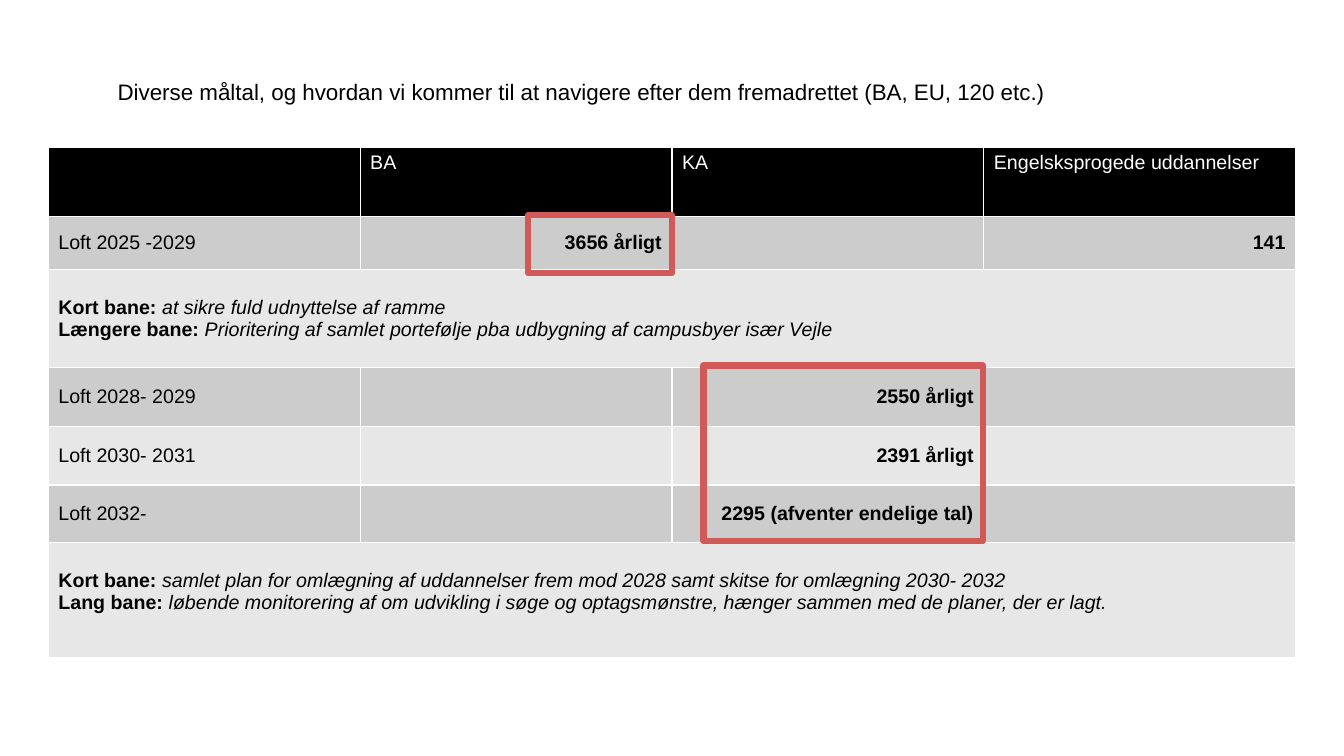
from pptx import Presentation
from pptx.dml.color import RGBColor
from pptx.enum.shapes import MSO_SHAPE
from pptx.enum.text import MSO_ANCHOR, MSO_AUTO_SIZE, PP_ALIGN
from pptx.util import Pt

PX = 9525
FONT = "Arial"
COLORS = {
    "black": "000000",
    "white": "FFFFFF",
    "dark": "CCCCCC",
    "light": "E7E7E7",
    "red": "D05A57",
}
ROW_HEIGHTS = [66, 51, 93, 56, 56, 55, 109]
COL_COUNT = 4
NOTE_TOP = 26
ROWS = [
    ["", "BA", "KA", "Engelsksprogede uddannelser"],
    ["Loft 2025 -2029", "3656 årligt", "", "141"],
    [
        ("Kort bane: ", "at sikre fuld udnyttelse af ramme"),
        ("Længere bane: ", "Prioritering af samlet portefølje pba udbygning af campusbyer især Vejle"),
    ],
    ["Loft 2028- 2029", "", "2550 årligt", ""],
    ["Loft 2030- 2031", "", "2391 årligt", ""],
    ["Loft 2032-", "", "2295 (afventer endelige tal)", ""],
    [
        ("Kort bane: ", "samlet plan for omlægning af uddannelser frem mod 2028 samt skitse for omlægning 2030- 2032"),
        ("Lang bane: ", "løbende monitorering af om udvikling i søge og optagsmønstre, hænger sammen med de planer, der er lagt."),
    ],
]


def rgb(name):
    return RGBColor.from_string(COLORS[name])


def style(font, size, color="black", bold=False, italic=False):
    font.name = FONT
    font.size = Pt(size)
    font.bold = bold
    font.italic = italic
    font.color.rgb = rgb(color)


def place(sp, x, y, w, h):
    sp.left, sp.top, sp.width, sp.height = x * PX, y * PX, w * PX, h * PX


def add_title(s, box):
    sp = s.shapes.title
    place(sp, *box)
    tf = sp.text_frame
    tf.text = "Diverse måltal, og hvordan vi kommer til at navigere efter dem fremadrettet (BA, EU, 120 etc.)"
    tf.margin_left = tf.margin_right = tf.margin_top = tf.margin_bottom = 0
    tf.word_wrap = False
    tf.auto_size = MSO_AUTO_SIZE.NONE
    tf.vertical_anchor = MSO_ANCHOR.TOP
    p = tf.paragraphs[0]
    p.alignment = PP_ALIGN.LEFT
    style(p.runs[0].font, 16)


def fill_note(cell, lines):
    cell.margin_top = NOTE_TOP * PX
    tf = cell.text_frame
    for i, (label, note) in enumerate(lines):
        p = tf.add_paragraph() if i else tf.paragraphs[0]
        for text, is_label in ((label, True), (note, False)):
            r = p.add_run()
            r.text = text
            style(r.font, 14, bold=is_label, italic=not is_label)


def fill_cell(cell, text, is_header, is_number):
    cell.text = text
    p = cell.text_frame.paragraphs[0]
    if is_header:
        style(p.font, 14, "white")
    else:
        cell.vertical_anchor = MSO_ANCHOR.MIDDLE
        p.alignment = PP_ALIGN.RIGHT if is_number else PP_ALIGN.LEFT
        style(p.font, 14, bold=is_number)
    for r in p.runs:
        style(r.font, 14, "white" if is_header else "black", is_number and not is_header)


def add_targets(s, box):
    x, y, w, h = (v * PX for v in box)
    table = s.shapes.add_table(len(ROWS), COL_COUNT, x, y, w, h).table
    for col in table.columns:
        col.width = w // COL_COUNT
    for i, (height, values) in enumerate(zip(ROW_HEIGHTS, ROWS)):
        table.rows[i].height = height * PX
        fill = "black" if i == 0 else "dark" if i % 2 else "light"
        for j in range(COL_COUNT):
            cell = table.cell(i, j)
            cell.fill.solid()
            cell.fill.fore_color.rgb = rgb(fill)
        if isinstance(values[0], tuple):
            table.cell(i, 0).merge(table.cell(i, COL_COUNT - 1))
            fill_note(table.cell(i, 0), values)
        else:
            for j, text in enumerate(values):
                fill_cell(table.cell(i, j), text, i == 0, j > 0)


def add_highlight(s, box):
    sp = s.shapes.add_shape(MSO_SHAPE.RECTANGLE, 0, 0, 0, 0)
    place(sp, *box)
    sp.shadow.inherit = False
    sp.fill.background()
    sp.line.color.rgb = rgb("red")
    sp.line.width = Pt(4.5)


def main():
    prs = Presentation()
    prs.slide_width, prs.slide_height = 1280 * PX, 720 * PX
    s = prs.slides.add_slide(prs.slide_layouts[5])
    add_title(s, (112, 74, 896, 52))
    add_targets(s, (46, 140, 1188, sum(ROW_HEIGHTS)))
    for box in ((503, 205, 137, 55), (670, 348, 266, 167)):
        add_highlight(s, box)
    prs.save("out.pptx")


if __name__ == "__main__":
    main()
